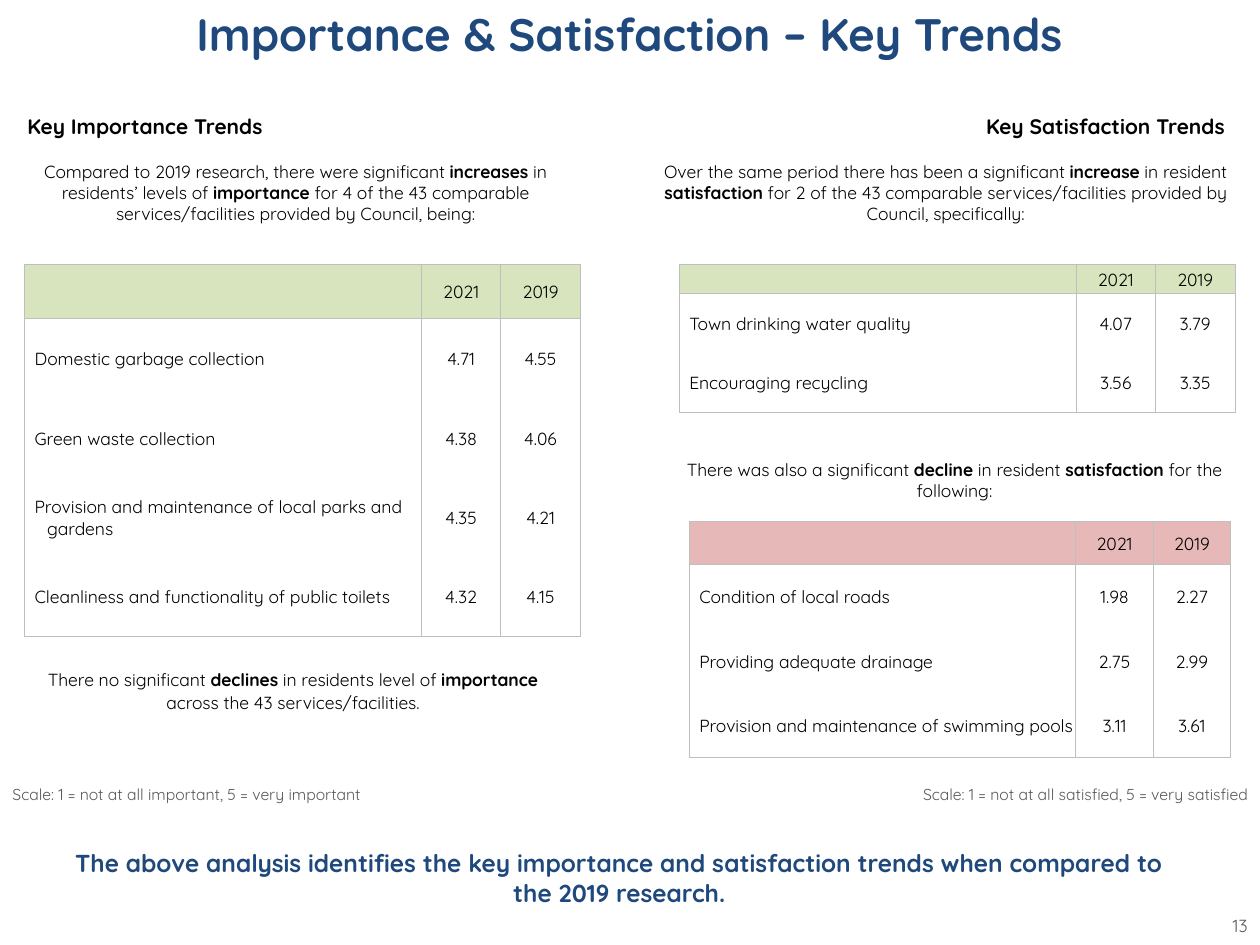
import pptx
import pptx.util
import pptx.dml.color
import pptx.enum.text
import pptx.oxml.ns
from dataclasses import dataclass
from lxml import etree

Pt = pptx.util.Pt
RGB = pptx.dml.color.RGBColor.from_string
Align = pptx.enum.text.PP_ALIGN
Anchor = pptx.enum.text.MSO_ANCHOR
qn = pptx.oxml.ns.qn


@dataclass(frozen=True)
class Theme:
    face: str = "Quicksand"
    navy: str = "1F497D"
    ink: str = "000000"
    gray: str = "595959"
    rule: str = "BFBFBF"
    green: str = "D7E4BD"
    red: str = "E6B9B8"
    title: float = 26
    close: float = 14
    head: float = 12
    body: float = 10
    small: float = 9


T = Theme()


def write(frame, text, size=T.body, color=T.ink, bold=False, align=Align.LEFT,
          space=None, hang=0):
    """Fill a frame with one paragraph; *stars* mark bold words."""
    frame.word_wrap = True
    para = frame.paragraphs[0]
    para.alignment = align
    para.space_before = Pt(0)
    if space:
        para.line_spacing = space
    props = para._p.get_or_add_pPr()
    props.set("marL", str(Pt(hang)))
    props.set("indent", str(-Pt(hang)))
    etree.SubElement(props, qn("a:buNone"))
    for i, part in enumerate(text.split("*")):
        if part:
            run = para.add_run()
            run.text = part
            font = run.font
            font.name, font.size = T.face, Pt(size)
            font.bold = bold or i % 2 == 1
            font.color.rgb = RGB(color)
    if not text:
        etree.SubElement(para._p, qn("a:endParaRPr"), sz=str(int(size * 100)))


def place(shape, x, y, w, h):
    shape.left, shape.top, shape.width, shape.height = map(Pt, (x, y, w, h))


def label(slide, box, text, **style):
    area = slide.shapes.add_textbox(*map(Pt, box))
    write(area.text_frame, text, **style)


def edge(cell, sides):
    """Draw the named sides of a cell and clear the others."""
    props = cell._tc.get_or_add_tcPr()
    for side in "LRTB":
        line = etree.SubElement(props, qn("a:ln" + side), w=str(Pt(0.5)))
        if side in sides:
            fill = etree.SubElement(line, qn("a:solidFill"))
            etree.SubElement(fill, qn("a:srgbClr"), val=T.rule)
        else:
            etree.SubElement(line, qn("a:noFill"))


def pad(cell, left, top, right):
    cell.margin_left, cell.margin_top = Pt(left), Pt(top)
    cell.margin_right, cell.margin_bottom = Pt(right), Pt(0)
    cell.vertical_anchor = Anchor.MIDDLE


def grid(slide, x, y, cols, head, step, tint, data):
    """Draw a year table: a tinted head row, then rows without inner rules."""
    rows = [("", "2021", "2019"), *data]
    high = head + step * len(data)
    frame = slide.shapes.add_table(len(rows), len(cols),
                                   *map(Pt, (x, y, sum(cols), high)))
    table = frame.table
    table.first_row = table.horz_banding = False
    for col, wide in zip(table.columns, cols):
        col.width = Pt(wide)
    for r, row in enumerate(rows):
        table.rows[r].height = Pt(step if r else head)
        for c, text in enumerate(row):
            cell = table.cell(r, c)
            side = Align.CENTER if c else Align.LEFT
            if r == 0:
                pad(cell, 5, 0, 5)
                edge(cell, "LRTB")
                cell.fill.solid()
                cell.fill.fore_color.rgb = RGB(tint)
                write(cell.text_frame, text, align=side, space=1.07)
            else:
                pad(cell, 0.7 if c else 5.8, 0.7, 0.7)
                edge(cell, "LR" + "T" * (r == 1) + "B" * (r == len(data)))
                cell.fill.background()
                write(cell.text_frame, text, align=side, hang=0 if c else 7.2)


def rank(slide, box):
    """Left column: importance trends."""
    x, y, w = box
    label(slide, (x + 8.6, y, 154, 21.6), "Key Importance Trends",
          size=T.head, bold=True, space=1.07)
    label(slide, (x, y + 28.1, w, 44),
          "Compared to 2019 research, there were significant *increases* in "
          "residents’ levels of *importance* for 4 of the 43 comparable "
          "services/facilities provided by Council, being:",
          align=Align.CENTER)
    grid(slide, x + 14, y + 90.7, (226.8, 45.4, 45.4), 31, 45.4, T.green, [
        ("Domestic garbage collection", "4.71", "4.55"),
        ("Green waste collection", "4.38", "4.06"),
        ("Provision and maintenance of local parks and gardens",
         "4.35", "4.21"),
        ("Cleanliness and functionality of public toilets", "4.32", "4.15")])
    label(slide, (x + 8.6, y + 317.5, 317.5, 32.4),
          "There no significant *declines* in residents level of "
          "*importance *across the 43 services/facilities.",
          align=Align.CENTER, space=1.07)
    label(slide, (x, y + 384.5, 229, 18),
          "Scale: 1 = not at all important, 5 = very important",
          size=T.small, color=T.gray)


def rate(slide, box):
    """Right column: satisfaction trends."""
    x, y, w = box
    label(slide, (x + 181.5, y, 154, 21.6), "Key Satisfaction Trends",
          size=T.head, bold=True, align=Align.RIGHT, space=1.07)
    label(slide, (x, y + 28.1, w, 44),
          "Over the same period there has been a significant *increase* in "
          "resident *satisfaction* for 2 of the 43 comparable "
          "services/facilities provided by Council, specifically:",
          align=Align.CENTER)
    grid(slide, x + 16.6, y + 90.7, (226.8, 45.4, 45.4), 16.6, 34, T.green, [
        ("Town drinking water quality", "4.07", "3.79"),
        ("Encouraging recycling", "3.56", "3.35")])
    label(slide, (x + 10.8, y + 198, 326.2, 31.7),
          "There was also a significant *decline* in resident "
          "*satisfaction* for the following:", align=Align.CENTER)
    grid(slide, x + 22.3, y + 237.6, (221, 44.2, 44.2), 24.5, 36.8, T.red, [
        ("Condition of local roads", "1.98", "2.27"),
        ("Providing adequate drainage", "2.75", "2.99"),
        ("Provision and maintenance of swimming pools", "3.11", "3.61")])
    label(slide, (x + 136.1, y + 384.5, 212.4, 18),
          "Scale: 1 = not at all satisfied, 5 = very satisfied",
          size=T.small, color=T.gray, align=Align.RIGHT)


def frame(slide):
    """Title, closing statement and page number."""
    title, close = slide.placeholders
    place(title, 0, 0, 720, 39.6)
    title.text_frame.vertical_anchor = Anchor.TOP
    write(title.text_frame, "Importance & Satisfaction – Key Trends",
          size=T.title, color=T.navy, bold=True, align=Align.CENTER)
    place(close, 25.2, 463, 657.4, 77)
    close.text_frame.vertical_anchor = Anchor.MIDDLE
    write(close.text_frame,
          "The above analysis identifies the key importance and satisfaction "
          "trends when compared to the 2019 research.",
          size=T.close, color=T.navy, bold=True, align=Align.CENTER)
    label(slide, (689, 519.1, 31, 19.4), "13", color=T.gray,
          align=Align.RIGHT)


def main():
    deck = pptx.Presentation()
    deck.slide_width, deck.slide_height = Pt(720), Pt(540)
    slide = deck.slides.add_slide(deck.slide_layouts[1])
    frame(slide)
    rank(slide, (0, 60.5, 337.7))
    rate(slide, (371.5, 60.5, 337.7))
    deck.save("out.pptx")


if __name__ == "__main__":
    main()
